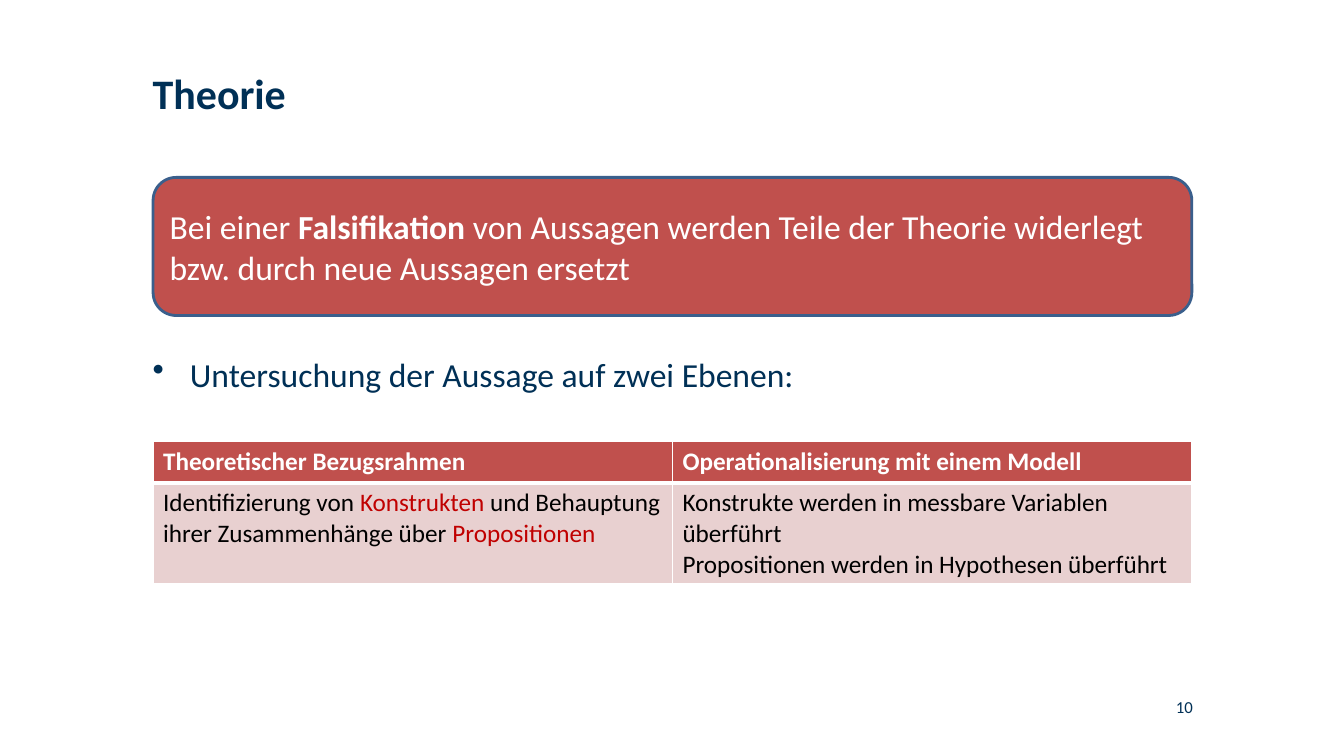
"""Build the slide on falsification and the two levels of a theory."""
from dataclasses import dataclass
from typing import Any

from lxml import etree
from pptx import Presentation
from pptx.dml.color import RGBColor
from pptx.enum.shapes import MSO_SHAPE
from pptx.enum.text import MSO_ANCHOR, PP_ALIGN
from pptx.oxml.ns import qn
from pptx.util import Emu, Inches, Pt

ROUND = MSO_SHAPE.ROUNDED_RECTANGLE
TOP, MIDDLE = MSO_ANCHOR.TOP, MSO_ANCHOR.MIDDLE
LEFT, RIGHT = PP_ALIGN.LEFT, PP_ALIGN.RIGHT
WIDTH, HEIGHT = Inches(13.34), Inches(7.5)
FONT = "Calibri"
COLORS = {
    "navy": "003056", "red": "C0504D", "pink": "E8D0D0", "edge": "3A5F8C",
    "mark": "C00000", "white": "FFFFFF", "black": "000000",
}
FLAT = {"margin_left": 0, "margin_top": 0, "margin_right": 0,
        "margin_bottom": 0, "word_wrap": True, "vertical_anchor": TOP}
PANEL = {"word_wrap": True, "vertical_anchor": MIDDLE}


@dataclass(frozen=True)
class Box:
    """Place and size in percent of the slide."""
    left: float
    top: float
    width: float
    height: float

    def spans(self) -> tuple[Emu, Emu, Emu, Emu]:
        """Return the box as slide lengths."""
        return (Emu(round(WIDTH * self.left / 100)),
                Emu(round(HEIGHT * self.top / 100)),
                Emu(round(WIDTH * self.width / 100)),
                Emu(round(HEIGHT * self.height / 100)))


@dataclass(frozen=True)
class Run:
    """A stretch of text with its colour and weight."""
    text: str
    color: str = "navy"
    bold: bool = False


@dataclass(frozen=True)
class Label:
    """A plain text box."""
    box: Box
    run: Run
    size: int
    align: Any = LEFT
    bullet: bool = False


@dataclass(frozen=True)
class Cell:
    """A table cell with its paragraphs."""
    fill: str
    paras: list[list[Run]]


LABELS = [
    Label(Box(11.36, 8.93, 52.92, 18.27), Run("Theorie", bold=True), 30),
    Label(Box(11.36, 46.8, 77.29, 9.47),
          Run("Untersuchung der Aussage auf zwei Ebenen:"), 24, bullet=True),
    Label(Box(77.21, 92.13, 11.54, 2.67), Run("10"), 12, RIGHT),
]
CLAIM = [
    Run("Bei einer ", "white"),
    Run("Falsifikation", "white", True),
    Run(" von Aussagen werden Teile der Theorie widerlegt "
        "bzw. durch neue Aussagen ersetzt", "white"),
]
CLAIM_BOX = Box(11.39, 23.47, 77.29, 18.27)
GRID_BOX = Box(11.39, 58.4, 77.29, 18.8)
HEAD_SHARE = 0.29
GRID = [
    [Cell("red", [[Run("Theoretischer Bezugsrahmen", "white", True)]]),
     Cell("red", [[Run("Operationalisierung mit einem Modell", "white", True)]])],
    [Cell("pink", [[Run("Identifizierung von ", "black"),
                    Run("Konstrukten", "mark"),
                    Run(" und Behauptung ihrer Zusammenhänge über ", "black"),
                    Run("Propositionen", "mark")]]),
     Cell("pink", [[Run("Konstrukte werden in messbare Variablen überführt",
                        "black")],
                   [Run("Propositionen werden in Hypothesen überführt",
                        "black")]])],
]


def tint(name: str) -> RGBColor:
    """Look up a colour by name."""
    return RGBColor.from_string(COLORS[name])


def apply(target: Any, values: dict[str, Any]) -> None:
    """Set each format value on the target."""
    for name, value in values.items():
        setattr(target, name, value)


def write(frame: Any, paras: list[list[Run]], size: int, align: Any = LEFT) -> None:
    """Fill a text frame with formatted paragraphs."""
    for row, runs in enumerate(paras):
        para = frame.add_paragraph() if row else frame.paragraphs[0]
        para.alignment = align
        for run in runs:
            part = para.add_run()
            part.text = run.text
            apply(part.font, {"name": FONT, "size": Pt(size), "bold": run.bold})
            part.font.color.rgb = tint(run.color)


def add_label(slide: Any, label: Label) -> None:
    """Draw one text box, with a bullet if asked."""
    frame = slide.shapes.add_textbox(*label.box.spans()).text_frame
    apply(frame, FLAT)
    write(frame, [[label.run]], label.size, label.align)
    if label.bullet:
        props = frame.paragraphs[0]._p.get_or_add_pPr()
        props.set("marL", str(Inches(0.37)))
        props.set("indent", str(Inches(-0.37)))
        etree.SubElement(props, qn("a:buChar"), char="•")


def add_claim(slide: Any) -> None:
    """Draw the rounded panel with the main claim."""
    panel = slide.shapes.add_shape(ROUND, *CLAIM_BOX.spans())
    panel.shadow.inherit = False
    panel.fill.solid()
    panel.fill.fore_color.rgb = tint("red")
    panel.line.color.rgb = tint("edge")
    panel.line.width = Pt(2)
    apply(panel.text_frame, PANEL)
    write(panel.text_frame, [CLAIM], 24)


def add_edges(cell: Any, widths: dict[str, int]) -> None:
    """Give a cell white borders of the given point widths."""
    props = cell._tc.get_or_add_tcPr()
    for side, width in widths.items():
        line = etree.SubElement(props, qn(f"a:ln{side}"), w=str(Pt(width)))
        fill = etree.SubElement(line, qn("a:solidFill"))
        etree.SubElement(fill, qn("a:srgbClr"), val=COLORS["white"])


def add_grid(slide: Any) -> None:
    """Draw the table of the two levels."""
    spans = GRID_BOX.spans()
    table = slide.shapes.add_table(len(GRID), len(GRID[0]), *spans).table
    head = round(spans[3] * HEAD_SHARE)
    for row, height in zip(table.rows, (head, spans[3] - head)):
        row.height = Emu(height)
    for index, cells in enumerate(GRID):
        rule = {"T": 3, "B": 1} if index else {"T": 1, "B": 3}
        for col, item in enumerate(cells):
            cell = table.cell(index, col)
            add_edges(cell, {"L": 1, "R": 1, **rule})
            cell.fill.solid()
            cell.fill.fore_color.rgb = tint(item.fill)
            write(cell.text_frame, item.paras, 18)


def main() -> None:
    """Build and save the slide."""
    deck = Presentation()
    apply(deck, {"slide_width": WIDTH, "slide_height": HEIGHT})
    slide = deck.slides.add_slide(deck.slide_layouts[6])
    for label in LABELS:
        add_label(slide, label)
    add_grid(slide)
    add_claim(slide)
    deck.save("out.pptx")


if __name__ == "__main__":
    main()
